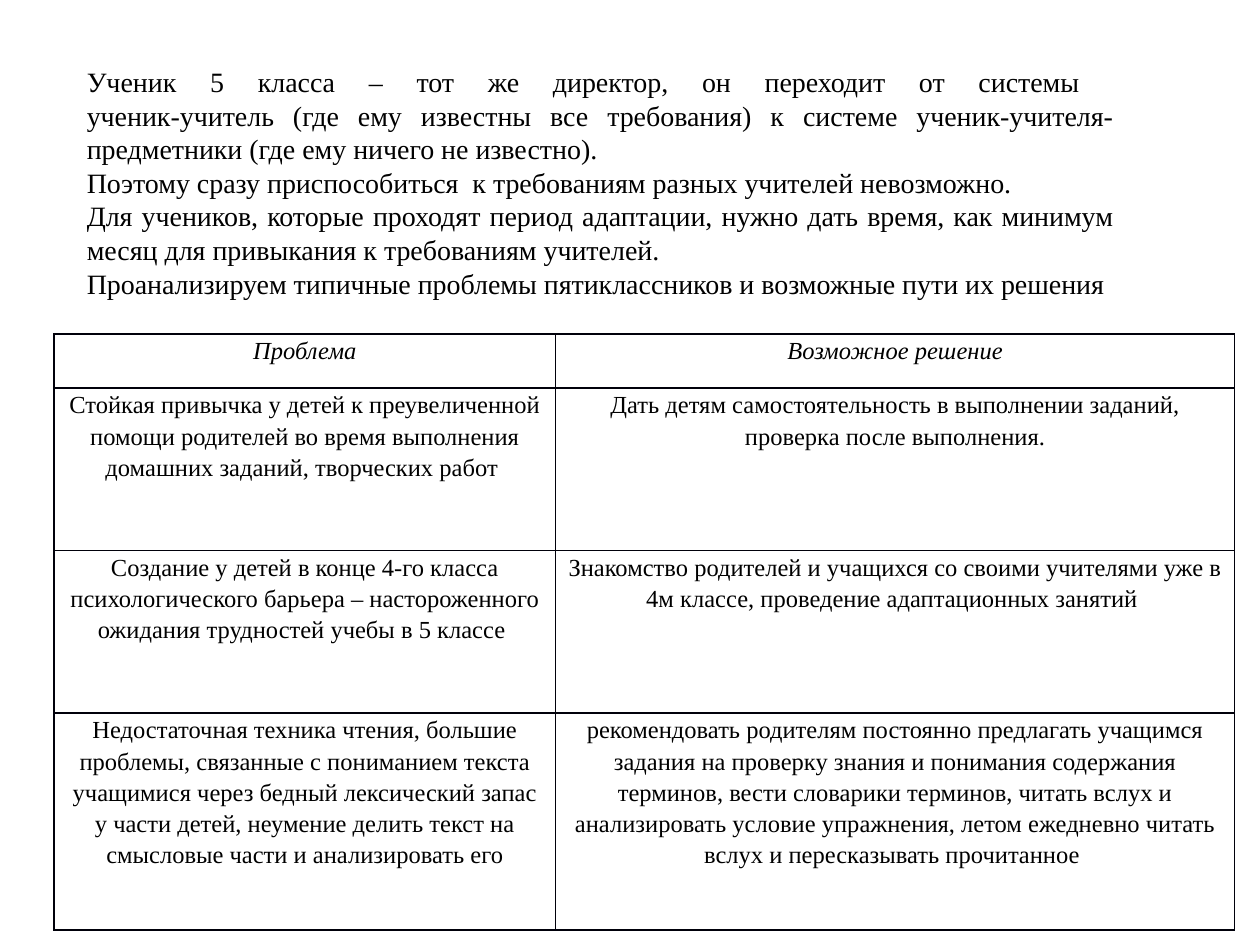
"""Build a slide about the typical problems of fifth-graders and their solutions."""
from lxml.etree import SubElement
from pptx import Presentation
from pptx.dml.color import RGBColor
from pptx.enum.text import MSO_ANCHOR, PP_ALIGN
from pptx.oxml.ns import qn
from pptx.util import Inches, Pt

FONT = "Times New Roman"
COLORS = {"text": "000000", "border": "00000A"}
INTRODUCTION = [
    "Ученик 5 класса – тот же директор, он переходит от системы \v"
    "ученик-учитель (где ему известны все требования) к системе "
    "ученик-учителя-предметники (где ему ничего не известно). ",
    "Поэтому сразу приспособиться  к требованиям разных учителей невозможно. ",
    "Для учеников, которые проходят период адаптации, нужно дать время, "
    "как минимум месяц для привыкания к требованиям учителей.",
    "Проанализируем типичные проблемы пятиклассников и возможные пути их решения",
]
ROWS = [
    ("Проблема", "Возможное решение"),
    ("Стойкая привычка у детей к преувеличенной помощи родителей во время "
     "выполнения домашних заданий, творческих работ ",
     "Дать детям самостоятельность в выполнении заданий, проверка после выполнения."),
    ("Создание у детей в конце 4-го класса психологического барьера – "
     "настороженного ожидания трудностей учебы в 5 классе ",
     "Знакомство родителей и учащихся со своими учителями уже в 4м классе, "
     "проведение адаптационных занятий "),
    ("Недостаточная техника чтения, большие проблемы, связанные с пониманием "
     "текста учащимися через бедный лексический запас у части детей, неумение "
     "делить текст на смысловые части и анализировать его",
     "рекомендовать родителям постоянно предлагать учащимся задания на проверку "
     "знания и понимания содержания терминов, вести словарики терминов, читать "
     "вслух и анализировать условие упражнения, летом ежедневно читать вслух и "
     "пересказывать прочитанное "),
]
COLUMN_WIDTHS = [3.98, 5.39]
ROW_HEIGHTS = [0.43, 1.29, 1.29, 1.72]


def format_paragraph(paragraph, size, alignment, italic=False):
    paragraph.alignment = alignment
    paragraph.font.name = FONT
    paragraph.font.size = Pt(size)
    paragraph.font.italic = italic
    paragraph.font.color.rgb = RGBColor.from_string(COLORS["text"])


def add_borders(cell):
    properties = cell._tc.get_or_add_tcPr()
    for side in ("lnL", "lnR", "lnT", "lnB"):
        line = SubElement(properties, qn(f"a:{side}"), w=str(Pt(1)))
        fill = SubElement(line, qn("a:solidFill"))
        SubElement(fill, qn("a:srgbClr"), val=COLORS["border"])


def add_introduction(slide):
    box = slide.shapes.add_textbox(Inches(0.59), Inches(0.45), Inches(8.35), Inches(1.99))
    frame = box.text_frame
    frame.word_wrap = True
    frame.vertical_anchor = MSO_ANCHOR.MIDDLE
    for index, text in enumerate(INTRODUCTION):
        paragraph = frame.add_paragraph() if index else frame.paragraphs[0]
        paragraph.text = text
        format_paragraph(paragraph, 16, PP_ALIGN.JUSTIFY)


def add_problem_table(slide):
    table = slide.shapes.add_table(
        len(ROWS), len(COLUMN_WIDTHS), Inches(0.43), Inches(2.65),
        Inches(sum(COLUMN_WIDTHS)), Inches(sum(ROW_HEIGHTS))).table
    table.first_row = table.horz_banding = False
    for column, width in zip(table.columns, COLUMN_WIDTHS):
        column.width = Inches(width)
    for row_index, (row, height) in enumerate(zip(table.rows, ROW_HEIGHTS)):
        row.height = Inches(height)
        for cell, text in zip(row.cells, ROWS[row_index]):
            cell.text = text
            cell.margin_left = cell.margin_right = Inches(0.08)
            cell.margin_top = cell.margin_bottom = 0
            add_borders(cell)
            cell.fill.background()
            paragraph = cell.text_frame.paragraphs[0]
            paragraph.line_spacing = 1.15
            format_paragraph(paragraph, 14, PP_ALIGN.CENTER, italic=row_index == 0)


def main():
    presentation = Presentation()
    presentation.slide_width, presentation.slide_height = Inches(10), Inches(7.5)
    slide = presentation.slides.add_slide(presentation.slide_layouts[6])
    add_problem_table(slide)
    add_introduction(slide)
    presentation.save("out.pptx")


if __name__ == "__main__":
    main()
